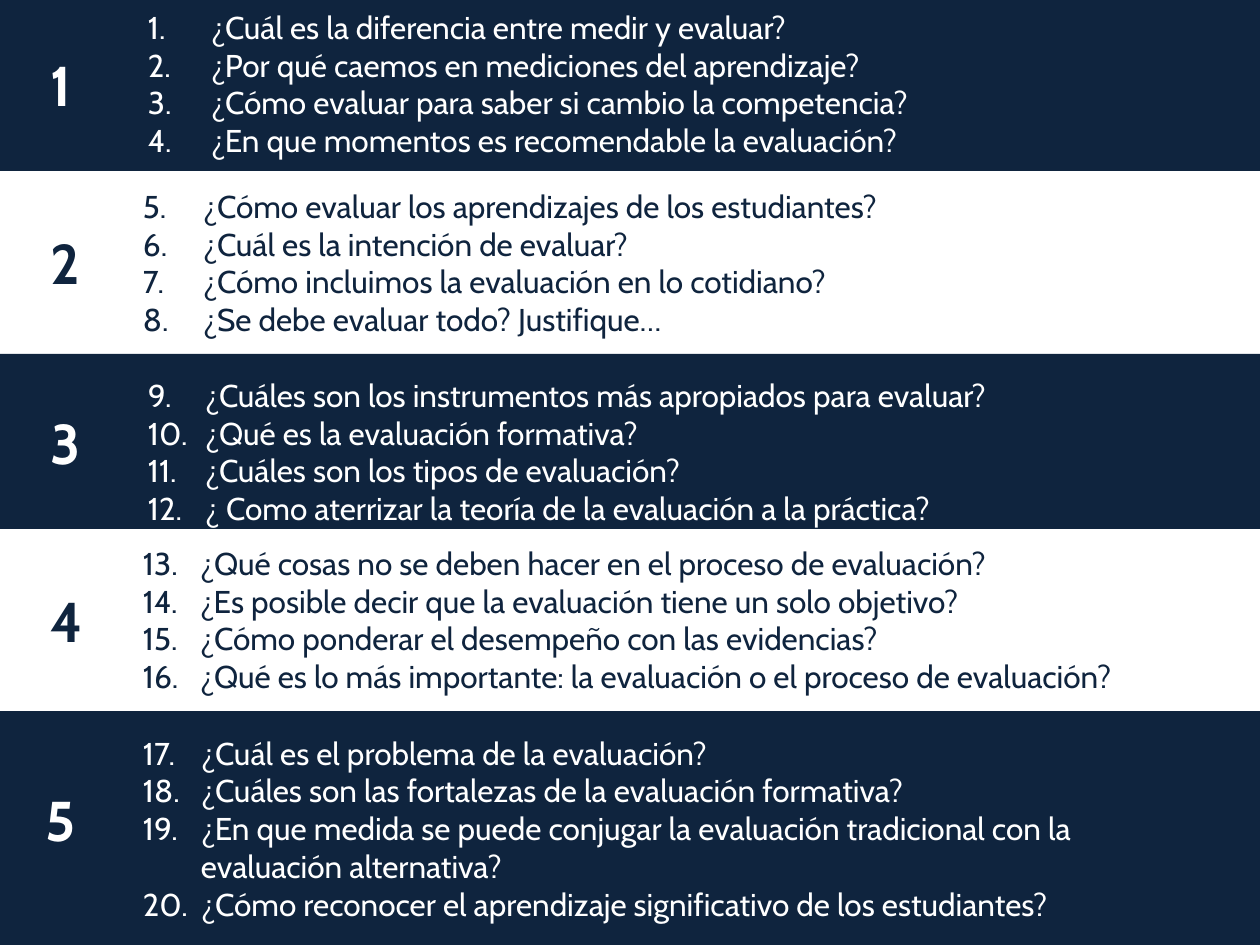
"""Builds a slide of twenty numbered questions on evaluation in five bands."""
from lxml.etree import SubElement
from pptx import Presentation
from pptx.dml.color import RGBColor as Rgb
from pptx.enum.shapes import MSO_SHAPE as Kind
from pptx.enum.text import MSO_ANCHOR as Anchor, PP_ALIGN as Align
from pptx.oxml.ns import qn
from pptx.util import Emu, Pt

SCALE = 914400 // 126
HUES = {"navy": "0F243E", "white": "FFFFFF"}
INSET = 13
STEP = 135

BANDS = [
    dict(box=(0, -4, 1260, 175), mark=(38, 44), hue="navy", ink="white",
         hang=63, items=[
             "¿Cuál es la diferencia entre medir y evaluar?",
             "¿Por qué caemos en mediciones del aprendizaje?",
             "¿Cómo evaluar para saber si cambio la competencia?",
             "¿En que momentos es recomendable la evaluación?"]),
    dict(box=(-5, 173, 1260, 179), mark=(38, 222), hue="white", ink="navy",
         hang=60, items=[
             "¿Cómo evaluar los aprendizajes de los estudiantes?",
             "¿Cuál es la intención de evaluar?",
             "¿Cómo incluimos la evaluación en lo cotidiano?",
             "¿Se debe evaluar todo? Justifique…"]),
    dict(box=(0, 354, 1260, 175), mark=(38, 402), hue="navy", ink="white",
         hang=57, drop=20, items=[
             "¿Cuáles son los instrumentos más apropiados para evaluar?",
             "¿Qué es la evaluación formativa?",
             "¿Cuáles son los tipos de evaluación?",
             "¿ Como aterrizar la teoría de la evaluación a la práctica?"]),
    dict(box=(-5, 530, 1260, 179), mark=(38, 580), hue="white", ink="navy",
         hang=57, items=[
             "¿Qué cosas no se deben hacer en el proceso de evaluación?",
             "¿Es posible decir que la evaluación tiene un solo objetivo?",
             "¿Cómo ponderar el desempeño con las evidencias?",
             "¿Qué es lo más importante: la evaluación o el proceso de evaluación?"]),
    dict(box=(-5, 711, 1265, 234), mark=(33, 779), hue="navy", ink="white",
         hang=58, items=[
             "¿Cuál es el problema de la evaluación?",
             "¿Cuáles son las fortalezas de la evaluación formativa?",
             "¿En que medida se puede conjugar la evaluación tradicional con la\n"
             "evaluación alternativa?",
             "¿Cómo reconocer el aprendizaje significativo de los estudiantes?"]),
]


def px(*vals):
    return [Emu(val * SCALE) for val in vals]


class Deck:
    """Holds the text style and the current slide."""

    def __init__(self, wide, high, face):
        self.show = Presentation()
        self.show.slide_width, self.show.slide_height = px(wide, high)
        self.slide = self.show.slides.add_slide(self.show.slide_layouts[6])
        self.face = face

    def add_text(self, para, text, size, ink, bold=False):
        run = para.add_run()
        run.text = text
        font = run.font
        font.name, font.size, font.bold = self.face, Pt(size), bold
        font.color.rgb = Rgb.from_string(HUES[ink])

    def number(self, para, start, hang):
        props = para._p.get_or_add_pPr()
        left, back = px(STEP + hang, -hang)
        props.set("marL", str(left))
        props.set("indent", str(back))
        SubElement(props, qn("a:buFont"), typeface=self.face)
        SubElement(props, qn("a:buAutoNum"), type="arabicPeriod",
                   startAt=str(start))

    def band(self, box, hue, ink, items, start, hang, drop=0):
        shape = self.slide.shapes.add_shape(Kind.RECTANGLE, *px(*box))
        shape.shadow.inherit = False
        shape.fill.solid()
        shape.fill.fore_color.rgb = Rgb.from_string(HUES[hue])
        shape.line.fill.background()
        frame = shape.text_frame
        frame.word_wrap = True
        frame.vertical_anchor = Anchor.MIDDLE
        frame.margin_left, frame.margin_right = px(INSET, INSET)
        frame.margin_top, frame.margin_bottom = px(6 + drop, 6)
        for rank, item in enumerate(items):
            para = frame.add_paragraph() if rank else frame.paragraphs[0]
            para.alignment = Align.LEFT
            self.number(para, start, hang)
            for row, line in enumerate(item.split("\n")):
                if row:
                    para.add_line_break()
                self.add_text(para, line, 18, ink)

    def mark(self, spot, text, ink):
        box = self.slide.shapes.add_textbox(*px(*spot, 57, 81))
        box.text_frame.word_wrap = False
        self.add_text(box.text_frame.paragraphs[0], text, 32, ink, True)

    def save(self):
        self.show.save("out.pptx")


def main():
    deck = Deck(1260, 945, "Cabin")
    start = 1
    for rank, part in enumerate(BANDS, 1):
        rest = dict(part)
        spot = rest.pop("mark")
        deck.band(start=start, **rest)
        deck.mark(spot, str(rank), part["ink"])
        start += len(part["items"])
    deck.save()


if __name__ == "__main__":
    main()
